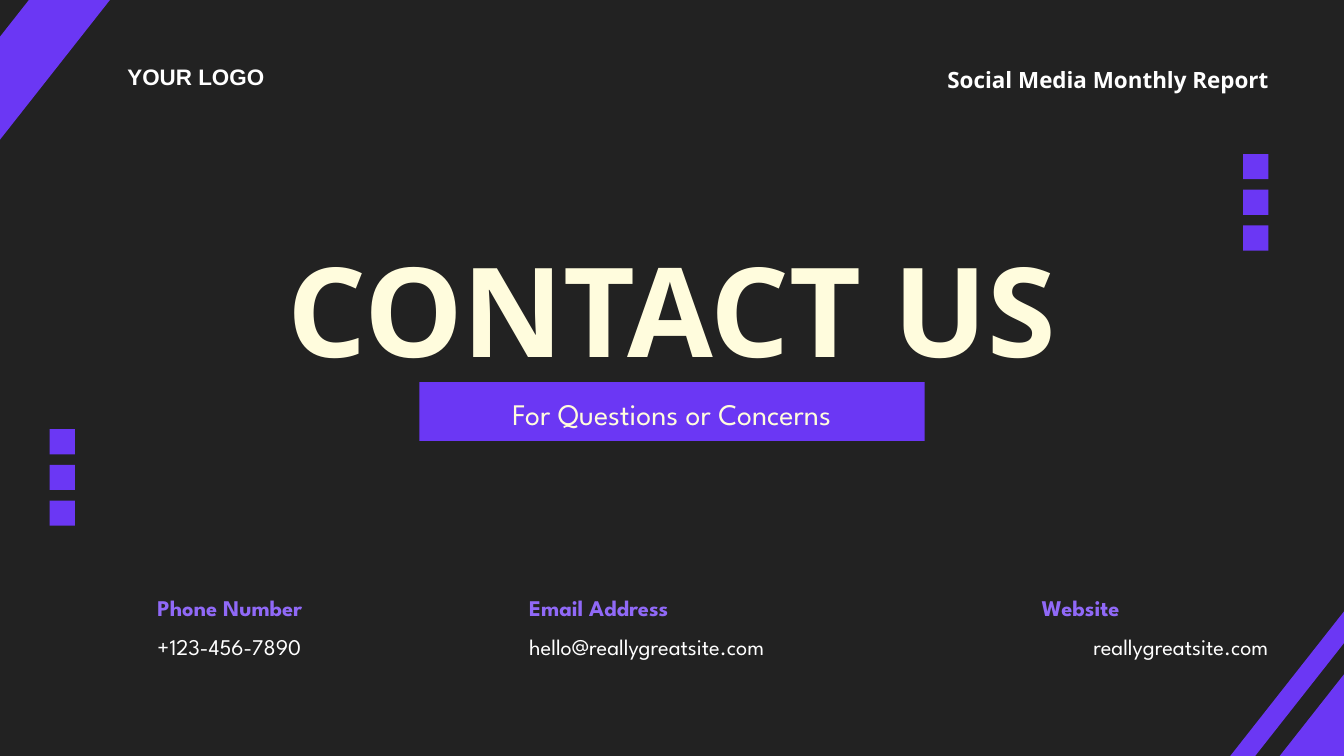
from pptx import Presentation
from pptx.dml.color import RGBColor
from pptx.enum.shapes import MSO_SHAPE
from pptx.enum.text import MSO_ANCHOR, MSO_AUTO_SIZE, PP_ALIGN
from pptx.util import Emu, Pt

BACKGROUND = RGBColor(0x22, 0x22, 0x22)
VIOLET = RGBColor(0x6B, 0x37, 0xF4)
LAVENDER = RGBColor(0x90, 0x69, 0xF7)
CREAM = RGBColor(0xFF, 0xFC, 0xDD)
WHITE = RGBColor(0xFF, 0xFF, 0xFF)

HEADING_FONT = "Open Sans"
BODY_FONT = "League Spartan"
LOGO_FONT = "Arial"

STRIPE_ANGLE = 38.2
SQUARE_SIZE = 36
SQUARE_STEP = 51
LABEL_TOP = 842
VALUE_TOP = 898
LINE_HEIGHT = 41


def px(length):
    """Convert px to EMU, at 96 px to the inch."""
    return Emu(length * 9525)


def write_text(shape, text, font_name, color, size=24, line_spacing=33.6,
               bold=False, align=PP_ALIGN.LEFT):
    frame = shape.text_frame
    frame.margin_left = frame.margin_top = 0
    frame.margin_right = frame.margin_bottom = 0
    frame.word_wrap = True
    frame.auto_size = MSO_AUTO_SIZE.NONE
    frame.vertical_anchor = MSO_ANCHOR.TOP
    paragraph = frame.paragraphs[0]
    paragraph.alignment = align
    paragraph.line_spacing = Pt(line_spacing)
    run = paragraph.add_run()
    run.text = text
    run.font.name = font_name
    run.font.size = Pt(size)
    run.font.bold = bold
    run.font.color.rgb = color


def add_text(slide, left, top, width, height, text, font_name, color, **style):
    shape = slide.shapes.add_textbox(px(left), px(top), px(width), px(height))
    write_text(shape, text, font_name, color, **style)


def add_block(slide, left, top, width, height, rotation=0):
    shape = slide.shapes.add_shape(
        MSO_SHAPE.RECTANGLE, px(left), px(top), px(width), px(height))
    shape.rotation = rotation
    shape.shadow.inherit = False
    shape.fill.solid()
    shape.fill.fore_color.rgb = VIOLET
    shape.line.fill.background()


def add_square_column(slide, left, top):
    for index in range(3):
        add_block(slide, left, top + index * SQUARE_STEP,
                  SQUARE_SIZE, SQUARE_SIZE)


def add_title(slide):
    title = slide.shapes.title
    title.left, title.top = px(246), px(391)
    title.width, title.height = px(1428), px(168)
    write_text(title, "CONTACT US", HEADING_FONT, CREAM, size=133.2,
               line_spacing=115.9, bold=True, align=PP_ALIGN.CENTER)


def add_subtitle(slide):
    add_block(slide, 599, 546, 722, 84)
    add_text(slide, 638, 557, 644, 57, "For Questions or Concerns",
             BODY_FONT, CREAM, size=32, line_spacing=44.8,
             align=PP_ALIGN.CENTER)


def add_header(slide):
    add_text(slide, 182, 84, 311, 45, "YOUR LOGO", LOGO_FONT, WHITE, bold=True)
    add_text(slide, 1255, 88, 557, LINE_HEIGHT, "Social Media Monthly Report",
             HEADING_FONT, WHITE, bold=True, align=PP_ALIGN.RIGHT)


def add_contacts(slide):
    contacts = [
        ("Phone Number", 225, 348,
         "+123-456-7890", 225, 374, PP_ALIGN.LEFT),
        ("Email Address", 756, 290,
         "hello@reallygreatsite.com", 756, 545, PP_ALIGN.LEFT),
        ("Website", 1488, 178,
         "reallygreatsite.com", 1419, 393, PP_ALIGN.RIGHT),
    ]
    for label, label_left, label_width, value, left, width, align in contacts:
        add_text(slide, label_left, LABEL_TOP, label_width, LINE_HEIGHT,
                 label, BODY_FONT, LAVENDER, bold=True)
        add_text(slide, left, VALUE_TOP, width, LINE_HEIGHT,
                 value, BODY_FONT, WHITE, align=align)


def add_corner_stripes(slide):
    stripes = [
        (1865, 923, 91, 252),
        (-25, -104, 91, 408),
        (1836, 843, 28, 284),
    ]
    for stripe in stripes:
        add_block(slide, *stripe, rotation=STRIPE_ANGLE)


def main():
    presentation = Presentation()
    presentation.slide_width = px(1920)
    presentation.slide_height = px(1080)
    title_only = presentation.slide_layouts[5]
    slide = presentation.slides.add_slide(title_only)
    slide.background.fill.solid()
    slide.background.fill.fore_color.rgb = BACKGROUND

    add_title(slide)
    add_subtitle(slide)
    add_header(slide)
    add_contacts(slide)
    add_corner_stripes(slide)
    add_square_column(slide, 71, 613)
    add_square_column(slide, 1776, 220)

    presentation.save("out.pptx")


if __name__ == "__main__":
    main()
